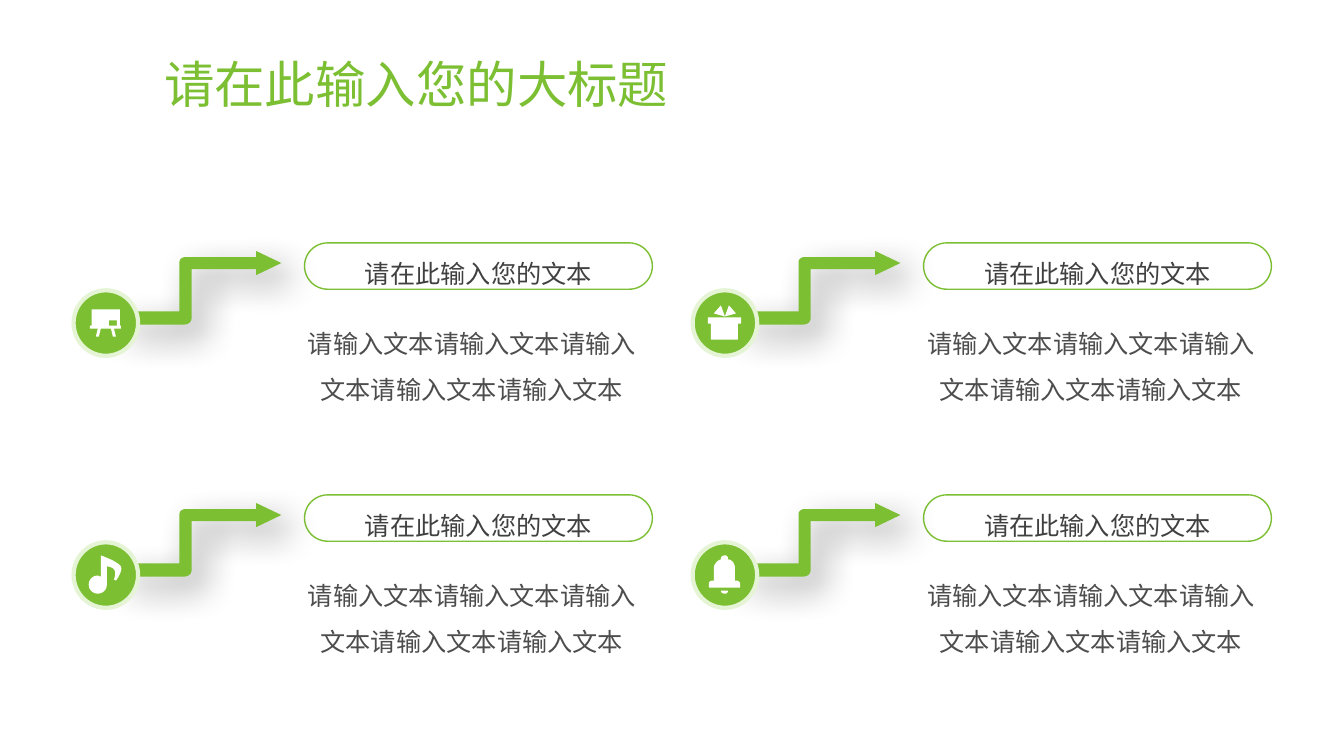
from lxml import etree
from pptx import Presentation
from pptx import util as u
from pptx.dml.color import RGBColor
from pptx.enum import shapes, text
from pptx.oxml.ns import qn

# Content
TITLE = "请在此输入您的大标题"
HEADING = "请在此输入您的文本"
BODY = "请输入文本" * 5
FONT = "Noto Sans CJK SC"
GREEN, PALE, WHITE = "7CBF33", "E5F4D5", "FFFFFF"
DARK, GREY = "404040", "4D4D4D"

# Outlines in hundredths of an inch from the badge corner:
# a pair is a straight step, six numbers are a cubic curve.
ARROW = [[(206, -27), (181, -15), (181, -21), (117, -21), (117, 28),
          (117, 30, 115, 34, 110, 34), (44, 34), (44, 21), (105, 21),
          (105, -28), (105, -31, 108, -33, 111, -33), (181, -33), (181, -39)]]
BOARD = [[(47, 35), (46, 35), (46, 19), (18, 19), (18, 35), (16, 35),
          (16, 38), (24, 38), (22, 46), (25, 46), (27, 38), (37, 38),
          (39, 46), (42, 46), (40, 38), (47, 38)],
         [(35, 30), (43, 30), (43, 35), (35, 35)]]
GIFT = [[(28, 15), (21, 23), (32, 26)],
        [(15, 27), (15, 33), (18, 33), (18, 49), (45, 49), (45, 33),
         (48, 33), (48, 27)],
        [(36, 15), (32, 26), (43, 23)]]
NOTE = [[(24, 33), (25, 33, 26, 34, 27, 34), (27, 13),
         (27, 13, 44, 19, 47, 24), (49, 29, 42, 38, 42, 38), (40, 37),
         (40, 37, 43, 30, 40, 27), (39, 25, 35, 24, 33, 24), (33, 42),
         (33, 47, 29, 51, 24, 51), (19, 51, 15, 47, 15, 42),
         (15, 37, 19, 33, 24, 33)]]
BELL = [[(28, 48), (35, 48), (35, 50, 34, 51, 32, 51),
         (30, 51, 28, 50, 28, 48)],
        [(32, 13), (34, 13, 35, 14, 35, 16), (35, 17), (36, 17),
         (40, 18, 42, 22, 42, 26), (42, 35), (42, 36, 42, 37, 42, 38),
         (43, 38), (45, 38, 47, 39, 47, 41), (47, 44),
         (47, 45, 47, 45, 46, 45), (17, 45), (17, 45, 16, 45, 16, 44),
         (16, 41), (16, 39, 18, 38, 20, 38), (21, 38),
         (21, 37, 21, 36, 21, 35), (21, 26), (21, 22, 24, 18, 28, 17),
         (28, 16), (28, 14, 30, 13, 32, 13)]]
ICON_GRID = [[BOARD, GIFT], [NOTE, BELL]]

# Grid: badge corner of the first cell, column and row pitch
LEFT, TOP, COLUMN, ROW = 0.73, 2.88, 6.14, 2.5
CURVE_STEPS = 8

deck = Presentation()
deck.slide_width, deck.slide_height = u.Inches(13.33), u.Inches(7.5)
page = deck.slides.add_slide(deck.slide_layouts[6])


def color(value):
    return RGBColor.from_string(value)


def paint(shape, fill, line=None, width=0):
    shape.shadow.inherit = False
    shape.fill.solid()
    shape.fill.fore_color.rgb = color(fill)
    if line:
        shape.line.color.rgb = color(line)
        shape.line.width = u.Pt(width)
    else:
        shape.line.fill.background()


def write(box, words, size, ink, spacing, align):
    frame = box.text_frame
    frame.word_wrap = True
    frame.vertical_anchor = text.MSO_ANCHOR.MIDDLE
    para = frame.paragraphs[0]
    para.alignment, para.line_spacing = align, spacing
    span = para.add_run()
    span.text = words
    span.font.size, span.font.name = u.Pt(size), FONT
    span.font.color.rgb = color(ink)
    east_asian = etree.SubElement(span.font._element, qn("a:ea"))
    east_asian.set("typeface", FONT)


def add_text(x, y, w, h, *style):
    box = page.shapes.add_textbox(*map(u.Inches, (x, y, w, h)))
    write(box, *style)


def add_preset(kind, x, y, w, h, *style):
    shape = page.shapes.add_shape(kind, *map(u.Inches, (x, y, w, h)))
    paint(shape, *style)
    return shape


def flatten(steps):
    points = []
    for step in steps:
        if len(step) == 2:
            points.append(step)
            continue
        start, stops = points[-1], (step[:2], step[2:4], step[4:])
        for i in range(1, CURVE_STEPS + 1):
            t = i / CURVE_STEPS
            s = 1 - t
            points.append(tuple(
                s**3 * a + 3 * s * s * t * b + 3 * s * t * t * c + t**3 * d
                for a, b, c, d in zip(start, *stops)))
    return points


def add_outline(contours, x, y, fill):
    # Thousandths of an inch keep the curve points distinct
    builder = None
    for steps in contours:
        points = [(round(x * 1000 + px * 10), round(y * 1000 + py * 10))
                  for px, py in flatten(steps)]
        if builder is None:
            builder = page.shapes.build_freeform(*points[0], scale=914.4)
        else:
            builder.move_to(*points[0])
        builder.add_line_segments(points[1:], close=True)
    shape = builder.convert_to_shape()
    paint(shape, fill)
    return shape


def add_soft_shadow(shape):
    effects = shape._element.spPr.find(qn("a:effectLst"))
    shadow = etree.SubElement(
        effects, qn("a:outerShdw"), blurRad=str(u.Pt(25)), dist=str(u.Pt(13)),
        dir=str(45 * 60000), algn="tl", rotWithShape="0")
    tint = etree.SubElement(shadow, qn("a:srgbClr"), val="000000")
    etree.SubElement(tint, qn("a:alpha"), val="40000")


# Title
add_text(1.53, 0.4, 10.6, 0.93, TITLE, 36, GREEN, 0.9, text.PP_ALIGN.LEFT)

# Four cells: heading pill, arrow, badge, body, icon
for row, icons in enumerate(ICON_GRID):
    for column, icon in enumerate(icons):
        x, y = LEFT + column * COLUMN, TOP + row * ROW
        pill = add_preset(shapes.MSO_SHAPE.ROUNDED_RECTANGLE,
                          x + 2.29, y - 0.47, 3.45, 0.46, WHITE, GREEN, 1)
        pill.adjustments[0] = 0.5
        write(pill, HEADING, 18, DARK, 1.5, text.PP_ALIGN.CENTER)
        add_soft_shadow(add_outline(ARROW, x, y, GREEN))
        add_preset(shapes.MSO_SHAPE.OVAL, x, y, 0.64, 0.65, GREEN, PALE, 3)
        add_text(x + 2.18, y + 0.14, 3.54, 1.08,
                 BODY, 18, GREY, 1.5, text.PP_ALIGN.CENTER)
        add_outline(icon, x, y, WHITE)

deck.save("out.pptx")
